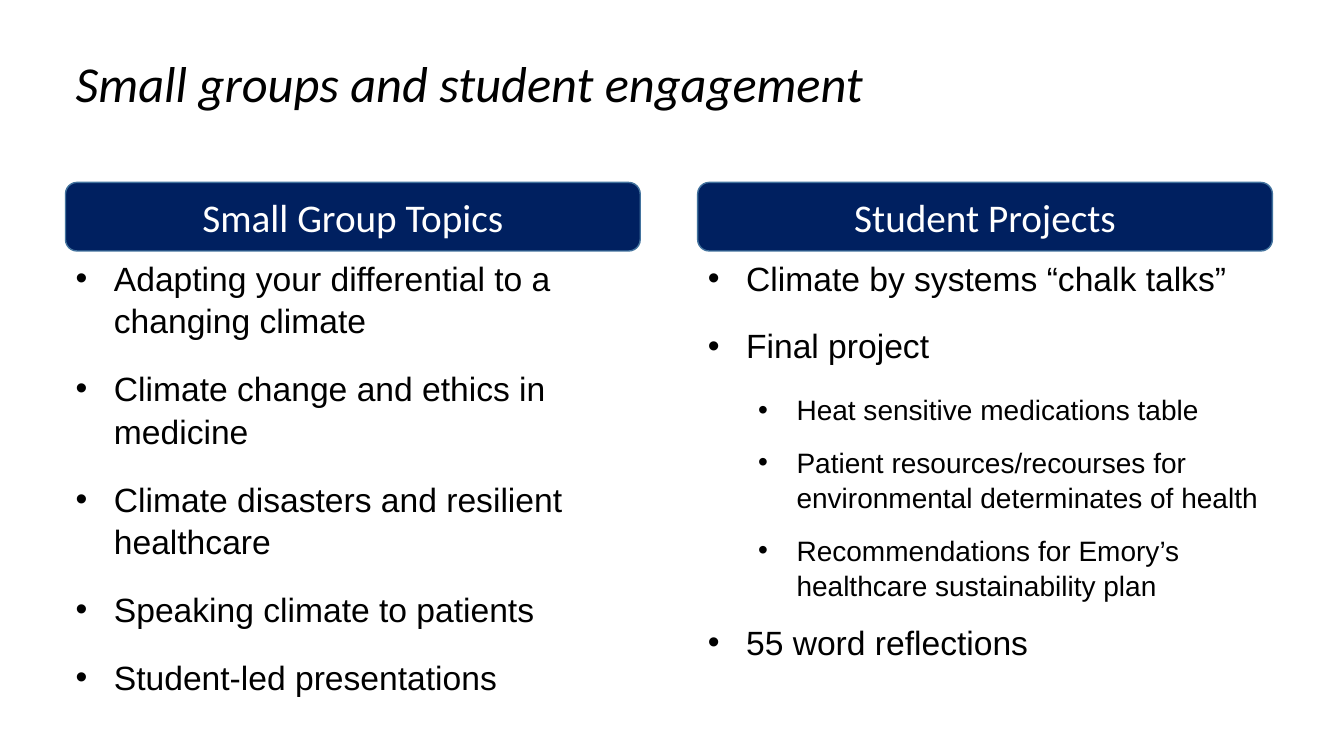
from dataclasses import dataclass

import pptx
import pptx.dml.color
import pptx.enum.shapes
import pptx.enum.text
import pptx.oxml
import pptx.oxml.ns
import pptx.util

PX = 9144  # EMU per px, 100 px to the inch
BLACK = pptx.dml.color.RGBColor(0x00, 0x00, 0x00)
WHITE = pptx.dml.color.RGBColor(0xFF, 0xFF, 0xFF)
NAVY = pptx.dml.color.RGBColor(0x00, 0x20, 0x60)
STEEL = pptx.dml.color.RGBColor(0x43, 0x73, 0x9E)

TWO_CONTENT_LAYOUT = 3
HEADER_TOP, HEADER_WIDTH, HEADER_HEIGHT = 181, 570, 68
LIST_TOP = 248
INDENT, LEVEL_STEP = 38, 50
LEVEL_SIZES = (24, 20)
LEVEL_SPACE_AFTER = (12, 6)


@dataclass(frozen=True)
class Item:
    text: str
    level: int = 0


@dataclass(frozen=True)
class Column:
    heading: str
    left: int
    list_width: int
    list_height: int
    items: tuple[Item, ...]


COLUMNS = (
    Column("Small Group Topics", 65, 570, 434, (
        Item("Adapting your differential to a changing climate"),
        Item("Climate change and ethics in medicine"),
        Item("Climate disasters and resilient healthcare"),
        Item("Speaking climate to patients"),
        Item("Student-led presentations"),
    )),
    Column("Student Projects", 692, 624, 466, (
        Item("Climate by systems “chalk talks”"),
        Item("Final project"),
        Item("Heat sensitive medications table", 1),
        Item("Patient resources/recourses for environmental determinates of health", 1),
        Item("Recommendations for Emory’s healthcare sustainability plan", 1),
        Item("55 word reflections"),
    )),
)


def place(box, left: int, top: int, width: int, height: int) -> None:
    box.left, box.top = left * PX, top * PX
    box.width, box.height = width * PX, height * PX


def add_text(para, text: str, *, size: int, font: str = "Calibri",
             color: pptx.dml.color.RGBColor = BLACK, italic: bool = False,
             align=pptx.enum.text.PP_ALIGN.LEFT) -> None:
    para.alignment = align
    span = para.add_run()
    span.text = text
    span.font.name = font
    span.font.size = pptx.util.Pt(size)
    span.font.color.rgb = color
    span.font.italic = italic


def set_bullet(para, level: int) -> None:
    props = para._p.get_or_add_pPr()
    props.set("marL", str((INDENT + level * LEVEL_STEP) * PX))
    props.set("indent", str(-INDENT * PX))
    for tag, attribute, value in (("buFont", "typeface", "Arial"),
                                  ("buChar", "char", "•")):
        props.append(pptx.oxml.parse_xml(
            f'<a:{tag} {pptx.oxml.ns.nsdecls("a")} {attribute}="{value}"/>'))


def fill_list(box, column: Column) -> None:
    place(box, column.left, LIST_TOP, column.list_width, column.list_height)
    frame = box.text_frame
    frame.word_wrap = True
    frame.auto_size = pptx.enum.text.MSO_AUTO_SIZE.NONE
    frame.vertical_anchor = pptx.enum.text.MSO_ANCHOR.TOP
    for index, item in enumerate(column.items):
        para = frame.add_paragraph() if index else frame.paragraphs[0]
        para.level = item.level
        set_bullet(para, item.level)
        para.line_spacing = 1.06
        para.space_before = pptx.util.Pt(6 if index else 0)
        para.space_after = pptx.util.Pt(LEVEL_SPACE_AFTER[item.level])
        add_text(para, item.text, size=LEVEL_SIZES[item.level], font="Arial")


def add_header(page, column: Column) -> None:
    box = page.shapes.add_shape(
        pptx.enum.shapes.MSO_SHAPE.ROUNDED_RECTANGLE,
        column.left * PX, HEADER_TOP * PX, HEADER_WIDTH * PX, HEADER_HEIGHT * PX)
    box.shadow.inherit = False
    box.fill.solid()
    box.fill.fore_color.rgb = NAVY
    box.line.color.rgb = STEEL
    box.line.width = pptx.util.Pt(1)
    box.text_frame.vertical_anchor = pptx.enum.text.MSO_ANCHOR.MIDDLE
    add_text(box.text_frame.paragraphs[0], column.heading, size=28, color=WHITE,
             align=pptx.enum.text.PP_ALIGN.CENTER)


def main() -> None:
    deck = pptx.Presentation()
    deck.slide_width = pptx.util.Inches(13.33)
    deck.slide_height = pptx.util.Inches(7.5)
    page = deck.slides.add_slide(deck.slide_layouts[TWO_CONTENT_LAYOUT])

    title = page.shapes.title
    place(title, 65, 47, 1204, 71)
    title.text_frame.auto_size = pptx.enum.text.MSO_AUTO_SIZE.NONE
    title.text_frame.vertical_anchor = pptx.enum.text.MSO_ANCHOR.TOP
    add_text(title.text_frame.paragraphs[0], "Small groups and student engagement",
             size=36, italic=True)

    for index, column in enumerate(COLUMNS, start=1):
        fill_list(page.placeholders[index], column)
        add_header(page, column)
    deck.save("out.pptx")


if __name__ == "__main__":
    main()
